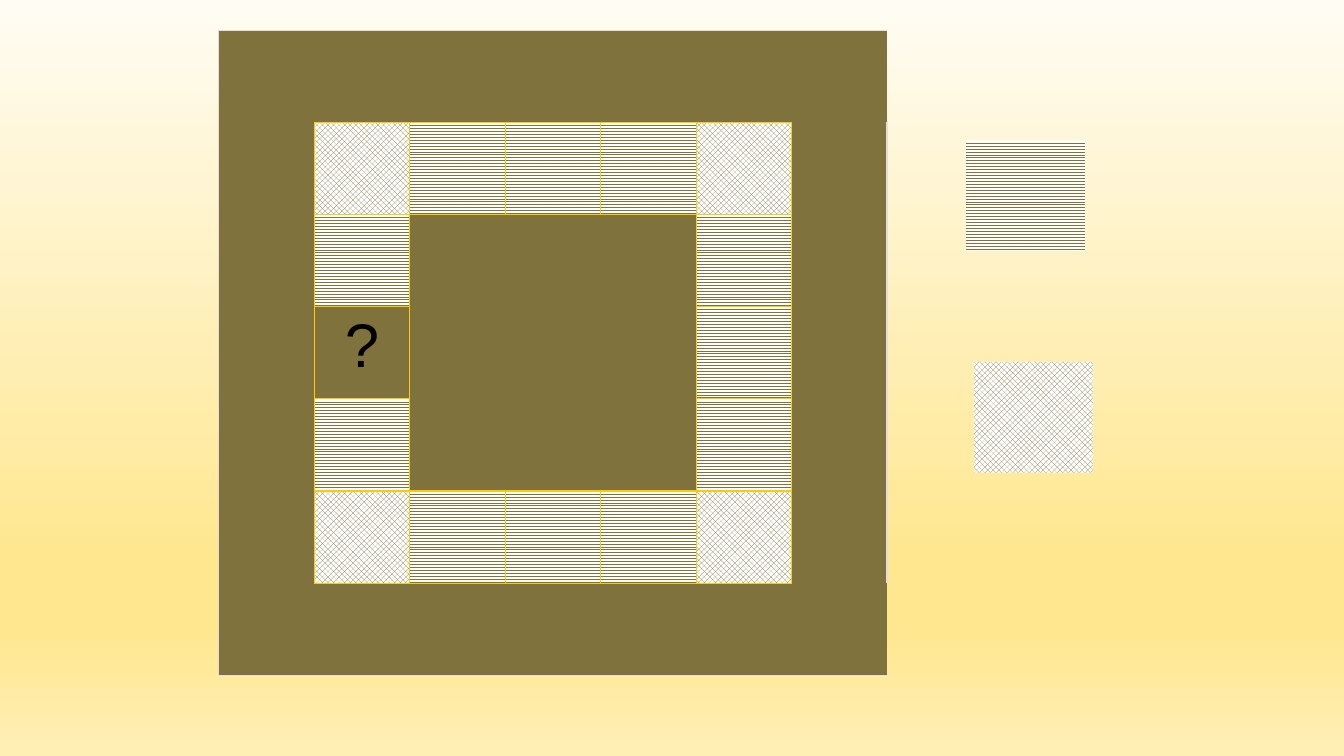
from lxml import etree
from pptx import Presentation
from pptx.dml.color import RGBColor
from pptx.enum.dml import MSO_PATTERN
from pptx.enum.shapes import MSO_SHAPE
from pptx.enum.text import PP_ALIGN
from pptx.oxml.ns import qn
from pptx.util import Inches, Pt

RECTANGLE = MSO_SHAPE.RECTANGLE
CENTER = PP_ALIGN.CENTER
STRIPES = MSO_PATTERN.ZIG_ZAG
DIAMONDS = MSO_PATTERN.OUTLINED_DIAMOND
PLAIN_TABLE_STYLE = "{2D5ABB26-0587-4C30-8999-92F81FD0307C}"

THEME = {
    "olive": "7F723D",
    "white": "FFFFFF",
    "yellow": "FFCA08",
    "pale": "E5DEDB",
    "ink": "000000",
    "background": [(0, "FFFCF3"), (74, "FFE790"), (83, "FFE790"), (100, "FFEFB5")],
    "font": "Arial",
    "question_size": Pt(44),
    "border": Pt(1),
}


def paint(fill, pattern=None):
    """Fill with plain olive, or with an olive pattern on white."""
    if pattern is None:
        fill.solid()
    else:
        fill.patterned()
        fill.pattern = pattern
        fill.back_color.rgb = RGBColor.from_string(THEME["white"])
    fill.fore_color.rgb = RGBColor.from_string(THEME["olive"])


def add_border(cell, side, color):
    line = etree.SubElement(cell._tc.get_or_add_tcPr(), qn(f"a:ln{side}"), w=str(THEME["border"]))
    solid = etree.SubElement(line, qn("a:solidFill"))
    etree.SubElement(solid, qn("a:srgbClr"), val=THEME[color])


prs = Presentation()
prs.slide_width = Inches(13.33)
prs.slide_height = Inches(7.5)
slide = prs.slides.add_slide(prs.slide_layouts[6])

# Background: vertical gradient with four stops
backdrop = slide.background.fill
backdrop.gradient()
backdrop.gradient_angle = 270
stops = slide.background._cSld.find(".//" + qn("a:gsLst"))
for old_stop in list(stops):
    stops.remove(old_stop)
for percent, color in THEME["background"]:
    stop = etree.SubElement(stops, qn("a:gs"), pos=str(percent * 1000))
    etree.SubElement(stop, qn("a:srgbClr"), val=color)

# Board: a frame, a ring of tiles and a centre
SIZE = 7
LAST = SIZE - 1
RING = (1, LAST - 1)
board_width, board_height = Inches(6.63), Inches(6.4)
board = slide.shapes.add_table(
    SIZE, SIZE, Inches(2.17), Inches(0.3), board_width, board_height
).table
board.first_row = False
board.horz_banding = False
board._tbl.tblPr.find(qn("a:tableStyleId")).text = PLAIN_TABLE_STYLE
for column in board.columns:
    column.width = board_width // SIZE
for row in board.rows:
    row.height = board_height // SIZE

question_spot = (3, 1)
for row in range(SIZE):
    for col in range(SIZE):
        cell = board.cell(row, col)
        inside = 0 < row < LAST and 0 < col < LAST
        on_ring = inside and (row in RING or col in RING)
        outer_sides = {"L": col == 0, "R": col == LAST, "T": row == 0, "B": row == LAST}
        for side, is_outer in outer_sides.items():
            if is_outer:
                add_border(cell, side, "pale")
            elif on_ring and not (side == "B" and row == RING[1]):
                add_border(cell, side, "yellow")

        if not on_ring or (row, col) == question_spot:
            paint(cell.fill)
        else:
            is_corner = row in RING and col in RING
            paint(cell.fill, DIAMONDS if is_corner else STRIPES)

merged_areas = [
    ((0, 0), (0, LAST)),
    ((1, 0), (LAST - 1, 0)),
    ((1, LAST), (LAST - 1, LAST)),
    ((2, 2), (LAST - 2, LAST - 2)),
    ((LAST, 0), (LAST, LAST)),
]
for first, last in merged_areas:
    board.cell(*first).merge(board.cell(*last))

question = board.cell(*question_spot).text_frame.paragraphs[0]
question.text = "?"
question.alignment = CENTER
question_font = question.runs[0].font
question_font.name = THEME["font"]
question_font.size = THEME["question_size"]
question_font.color.rgb = RGBColor.from_string(THEME["ink"])

# Answer tiles to the right of the board
for left, top, pattern in [(9.58, 1.39, STRIPES), (9.66, 3.59, DIAMONDS)]:
    answer = slide.shapes.add_shape(
        RECTANGLE, Inches(left), Inches(top), Inches(1.18), Inches(1.1)
    )
    answer.shadow.inherit = False
    answer.line.fill.background()
    paint(answer.fill, pattern)

prs.save("out.pptx")
